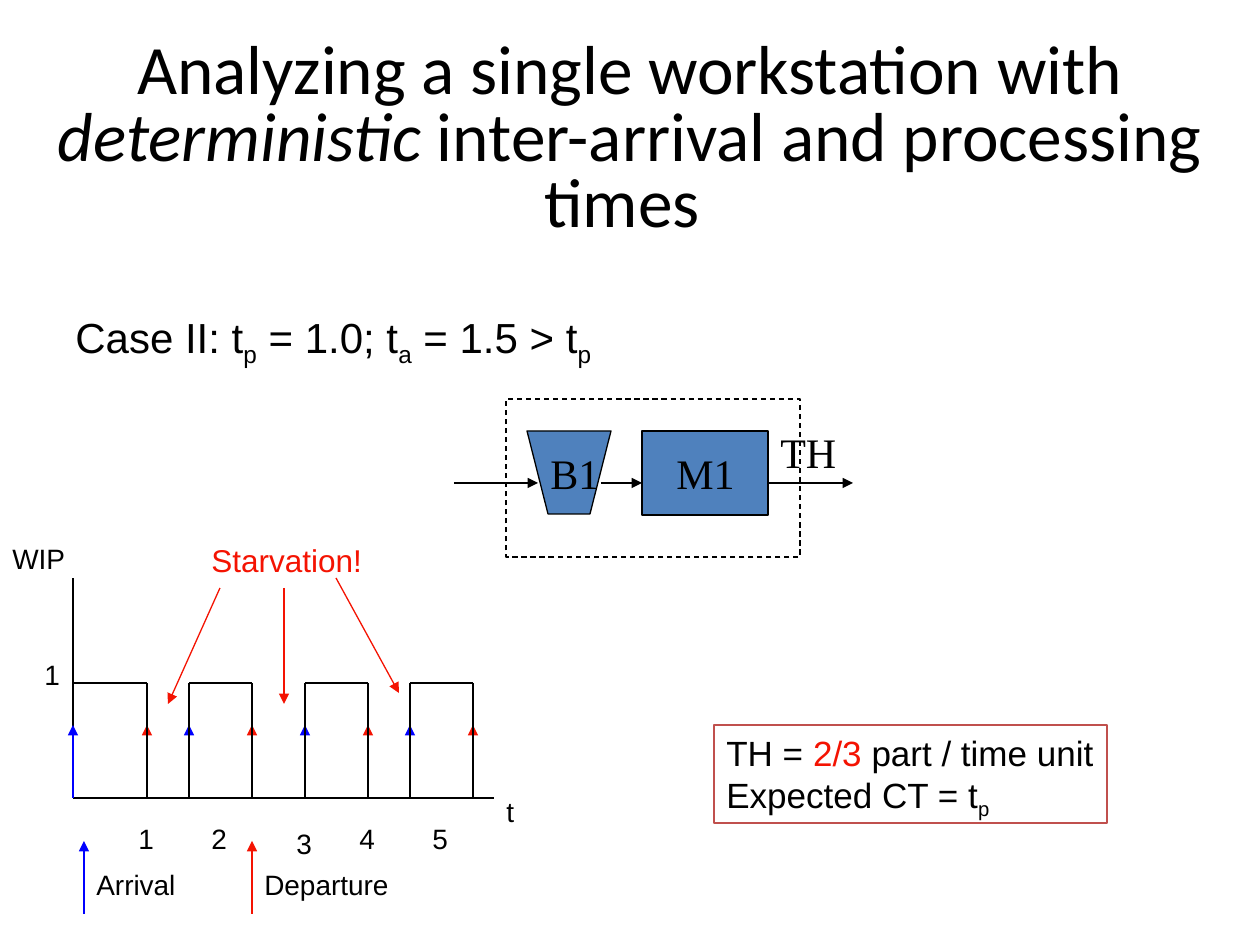
from lxml import etree
from pptx import Presentation
from pptx.dml.color import RGBColor
from pptx.enum.dml import MSO_LINE
from pptx.enum.shapes import MSO_CONNECTOR, MSO_SHAPE
from pptx.enum.text import MSO_ANCHOR, MSO_AUTO_SIZE, PP_ALIGN
from pptx.oxml.ns import qn
from pptx.util import Pt

PX = 914400 / 126
COLORS = {"black": "000000", "blue": "0000FF", "red": "F41302",
          "fill": "4F81BD", "border": "C0504D"}

# Runs are (text, style); style is "", "i", "sub" or a colour name.
TITLE = [("Analyzing a single workstation with ", ""), ("deterministic", "i"),
         (" inter-arrival and processing times ", "")]
CASE = [[("Case II: t", ""), ("p", "sub"), (" = 1.0; t", ""), ("a", "sub"),
         (" = 1.5 > t", ""), ("p", "sub")]]
RESULT = [[("TH = ", ""), ("2/3", "red"), (" part / time unit", "")],
          [("Expected CT = t", ""), ("p", "sub")]]

# Workstation diagram
BUFFER = [(527, 431), (548, 514), (590, 514), (611, 431)]
MACHINE = (642, 431, 126, 84)
BOUNDARY = (506, 399, 294, 158)
FLOW_Y = 483
FLOWS = [(454, 538), (601, 642), (768, 853)]
STATION_LABELS = [("TH", 768, 420, 86), ("B1", 538, 441, 80), ("M1", 664, 441, 92)]

# WIP chart
AXIS_X, AXIS_Y = 73, 798
AXIS_RIGHT, AXIS_TOP = 494, 578
WIP_ONE_Y = 683
ARROW_LENGTH = 73
PULSES = [(73, 147), (189, 252), (305, 368), (410, 473)]  # arrival, departure
CHART_LABELS = [("t", 494, 788, 32), ("WIP", 0, 535, 81), ("1", 32, 651, 40),
                ("1", 126, 815, 40), ("2", 199, 815, 40), ("3", 284, 820, 40),
                ("4", 347, 815, 40), ("5", 420, 815, 40)]
LEGEND = [("Arrival", 84, 104, "blue"), ("Departure", 252, 150, "red")]
LEGEND_Y = 914
STARVATION = [((220, 588), (168, 704)), ((284, 588), (284, 704)),
              ((336, 578), (399, 693))]


def px(*values):
    return [round(v * PX) for v in values]


def rgb(name):
    return RGBColor.from_string(COLORS[name])


def outline(shape, color="black"):
    shape.line.color.rgb = rgb(color)
    shape.line.width = Pt(0.75)


def add_line(shapes, start, end, color="black", arrow=False):
    line = shapes.add_connector(MSO_CONNECTOR.STRAIGHT, *px(*start, *end))
    outline(line, color)
    properties = line._element.spPr
    if arrow:
        etree.SubElement(properties.find(qn("a:ln")), qn("a:tailEnd"), type="triangle")
    etree.SubElement(properties, qn("a:effectLst"))


def add_runs(p, runs, size, font, color="black"):
    for text, style in runs:
        r = p.add_run()
        r.text = text
        r.font.size = Pt(size)
        r.font.name = font
        r.font.color.rgb = rgb(style if style in COLORS else color)
        if style == "i":
            r.font.italic = True
        elif style == "sub":
            r._r.get_or_add_rPr().set("baseline", "-25000")


def add_text(shapes, paragraphs, box, size, font="Arial", color="black"):
    sp = shapes.add_textbox(*px(*box))
    tf = sp.text_frame
    tf.word_wrap = False
    tf.auto_size = MSO_AUTO_SIZE.SHAPE_TO_FIT_TEXT
    for i, runs in enumerate(paragraphs):
        p = tf.add_paragraph() if i else tf.paragraphs[0]
        add_runs(p, runs, size, font, color)
    return sp


def add_label(shapes, text, box, size, font="Arial", color="black"):
    add_text(shapes, [[(text, "")]], box, size, font, color)


def add_title(slide):
    title = slide.shapes.title
    title.left, title.top, title.width, title.height = px(0, 42, 1260, 199)
    tf = title.text_frame
    tf.word_wrap = True
    tf.auto_size = MSO_AUTO_SIZE.NONE
    tf.vertical_anchor = MSO_ANCHOR.MIDDLE
    p = tf.paragraphs[0]
    p.alignment = PP_ALIGN.CENTER
    p.line_spacing = 0.8
    add_runs(p, TITLE, 39.6, "Calibri")


def add_workstation(shapes):
    machine = shapes.add_shape(MSO_SHAPE.RECTANGLE, *px(*MACHINE))
    builder = shapes.build_freeform(*BUFFER[0], scale=PX)
    builder.add_line_segments(BUFFER[1:], close=True)
    buffer = builder.convert_to_shape()
    boundary = shapes.add_shape(MSO_SHAPE.RECTANGLE, *px(*BOUNDARY))
    for sp in (machine, buffer, boundary):
        sp.shadow.inherit = False
        sp.fill.solid()
        sp.fill.fore_color.rgb = rgb("fill")
        outline(sp)
    boundary.fill.background()
    boundary.line.dash_style = MSO_LINE.DASH
    for x1, x2 in FLOWS:
        add_line(shapes, (x1, FLOW_Y), (x2, FLOW_Y), arrow=True)
    for text, x, y, width in STATION_LABELS:
        add_label(shapes, text, (x, y, width, 63), 24, "Times New Roman")


def add_wip_chart(shapes):
    add_line(shapes, (AXIS_X, AXIS_Y), (AXIS_RIGHT, AXIS_Y))
    add_line(shapes, (AXIS_X, AXIS_Y), (AXIS_X, AXIS_TOP))
    for text, x, y, width in CHART_LABELS:
        add_label(shapes, text, (x, y, width, 47), 16)
    for pulse in PULSES:
        for x, color in zip(pulse, ("blue", "red")):
            add_line(shapes, (x, AXIS_Y), (x, AXIS_Y - ARROW_LENGTH), color, arrow=True)
    for start, end in PULSES:
        if start != AXIS_X:
            add_line(shapes, (start, AXIS_Y), (start, WIP_ONE_Y))
        add_line(shapes, (start, WIP_ONE_Y), (end, WIP_ONE_Y))
        add_line(shapes, (end, WIP_ONE_Y), (end, AXIS_Y))
    for text, x, width, color in LEGEND:
        add_line(shapes, (x, LEGEND_Y), (x, LEGEND_Y - ARROW_LENGTH), color, arrow=True)
        add_label(shapes, text, (x, 861, width, 47), 16)
    add_label(shapes, "Starvation!", (199, 535, 176, 50), 18, color="red")
    for start, end in STARVATION:
        add_line(shapes, start, end, "red", arrow=True)


def main():
    prs = Presentation()
    prs.slide_width, prs.slide_height = px(1260, 945)
    slide = prs.slides.add_slide(prs.slide_layouts[5])
    shapes = slide.shapes
    add_title(slide)
    add_workstation(shapes.add_group_shape().shapes)
    add_text(shapes, CASE, (63, 305, 547, 63), 24)
    add_wip_chart(shapes)
    result = add_text(shapes, RESULT, (714, 725, 393, 98), 20)
    outline(result, "border")
    prs.save("out.pptx")


if __name__ == "__main__":
    main()
